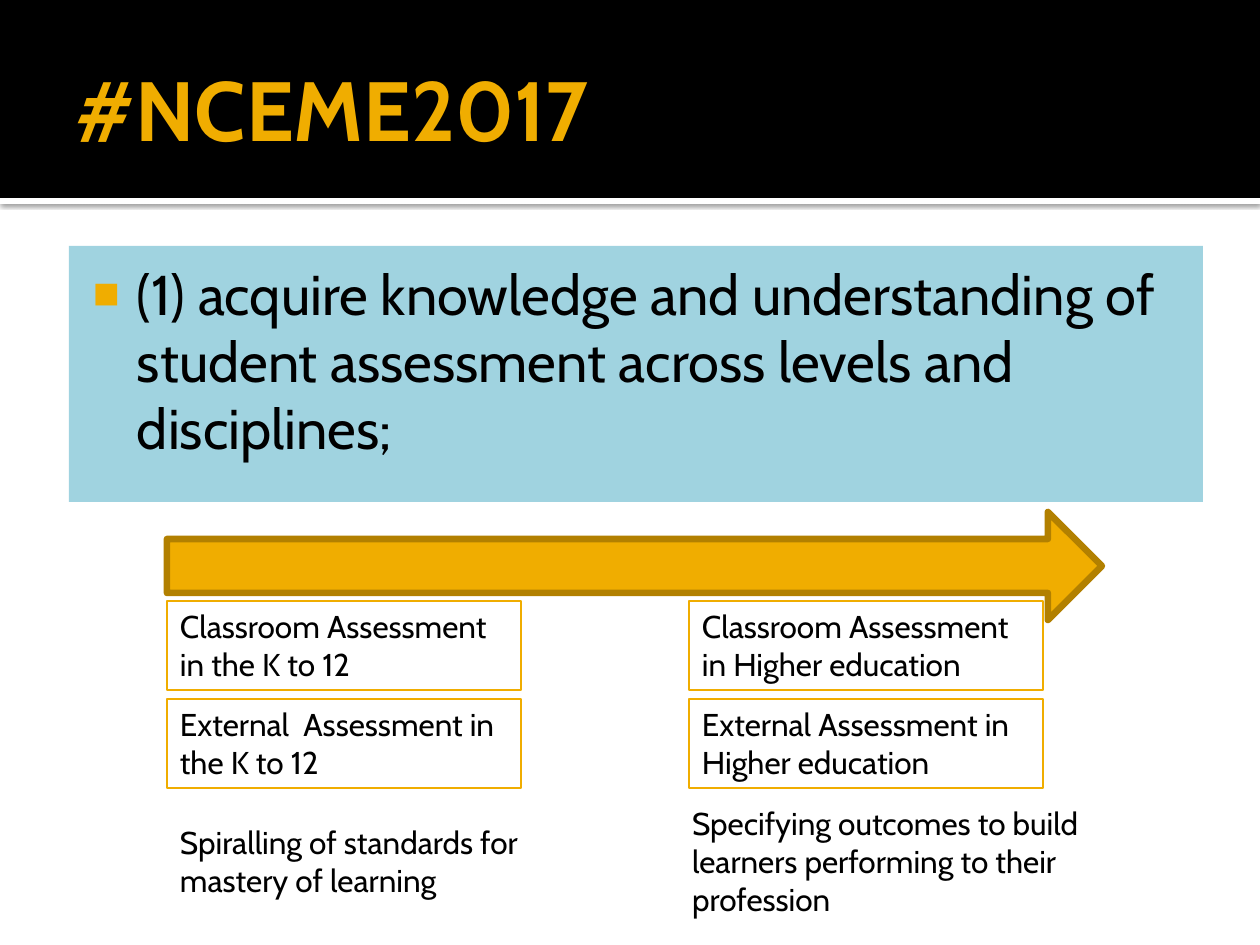
import pptx
import pptx.dml.color
import pptx.enum.shapes
import pptx.enum.text
import pptx.oxml
import pptx.oxml.ns
import pptx.util

PX = 914400 // 126
BLACK, WHITE, GOLD, DARK_GOLD, BLUE = "000000", "FFFFFF", "F0AD00", "B28000", "A0D3E0"
SHAPE = pptx.enum.shapes.MSO_SHAPE


def paint(color_format, hex_color):
    """Set a fill or font colour from a hex string."""
    if hasattr(color_format, "solid"):
        color_format.solid()
        color_format.fore_color.rgb = pptx.dml.color.RGBColor.from_string(hex_color)
    else:
        color_format.color.rgb = pptx.dml.color.RGBColor.from_string(hex_color)


def add_block(kind, box, fill=None, line=None, line_pt=0.75, text="", size=18, color=BLACK,
              margins=(13, 6, 13, 6), anchor="TOP"):
    """Add a shape, or a text box when kind is None; box and margins are in px."""
    left, top, width, height = [v * PX for v in box]
    if kind is None:
        block = slide.shapes.add_textbox(left, top, width, height)
    else:
        block = slide.shapes.add_shape(kind, left, top, width, height)
        block.shadow.inherit = False
    if fill:
        paint(block.fill, fill)
    else:
        block.fill.background()
    if line:
        paint(block.line.fill, line)
        block.line.width = pptx.util.Pt(line_pt)
    else:
        block.line.fill.background()
    if text:
        frame = block.text_frame
        frame.word_wrap = True
        frame.vertical_anchor = pptx.enum.text.MSO_ANCHOR[anchor]
        frame.margin_left, frame.margin_top, frame.margin_right, frame.margin_bottom = [
            v * PX for v in margins]
        paragraph = frame.paragraphs[0]
        paragraph.text = text
        paragraph.alignment = pptx.enum.text.PP_ALIGN.LEFT
        paragraph.font.name = "Cabin"
        paragraph.font.size = pptx.util.Pt(size)
        paint(paragraph.font, color)
    return block


presentation = pptx.Presentation()
presentation.slide_width = 1260 * PX
presentation.slide_height = 945 * PX
slide = presentation.slides.add_slide(presentation.slide_layouts[6])
paint(slide.background.fill, WHITE)

# Header band with a white, shadowed rule below it
rule = add_block(SHAPE.RECTANGLE, (0, 198, 1260, 6), fill=WHITE)
effects = rule._element.spPr.find(pptx.oxml.ns.qn("a:effectLst"))
effects.append(pptx.oxml.parse_xml(
    f'<a:outerShdw {pptx.oxml.ns.nsdecls("a")} blurRad="31750" dist="10160" dir="5400000" '
    'algn="tl" rotWithShape="0"><a:srgbClr val="000000"><a:alpha val="60000"/></a:srgbClr>'
    '</a:outerShdw>'))
add_block(SHAPE.RECTANGLE, (0, 0, 1260, 198), fill=BLACK)
title = add_block(None, (63, 21, 1134, 173), text="#NCEME2017", size=48, color=GOLD,
                  margins=(13, 6, 6, 6), anchor="MIDDLE")
title.text_frame.paragraphs[0].font.bold = True

# Objective with a square bullet
objective = add_block(
    SHAPE.RECTANGLE, (69, 246, 1134, 256), fill=BLUE, size=32, margins=(8, 13, 13, 6),
    text="(1) acquire knowledge and understanding of student assessment across levels "
         "and disciplines;")
properties = objective.text_frame.paragraphs[0]._p.get_or_add_pPr()
properties.set("marL", str(60 * PX))
properties.set("indent", str(-44 * PX))
for bullet_part in (f'buClr {{}}><a:srgbClr val="{GOLD}"/></a:buClr>',
                    'buSzPct {} val="80000"/>',
                    'buFont {} typeface="Arial"/>',
                    'buChar {} char="■"/>'):
    properties.append(pptx.oxml.parse_xml(
        "<a:" + bullet_part.format(pptx.oxml.ns.nsdecls("a"))))

# Progression from K to 12 to higher education
add_block(SHAPE.RIGHT_ARROW, (167, 512, 935, 108), fill=GOLD, line=DARK_GOLD, line_pt=3.78)
stages = [
    (167, ["Classroom Assessment in the K to 12", "External  Assessment in the K to 12"]),
    (689, ["Classroom Assessment in Higher education",
           "External Assessment in Higher education"]),
]
for left, assessments in stages:
    for row, assessment in enumerate(assessments):
        add_block(SHAPE.RECTANGLE, (left, 601 + 98 * row, 354, 89), line=GOLD, text=assessment)

add_block(None, (167, 817, 374, 89), text="Spiralling of standards for mastery of learning")
add_block(None, (679, 798, 501, 127),
          text="Specifying outcomes to build learners performing to their profession")

presentation.save("out.pptx")
